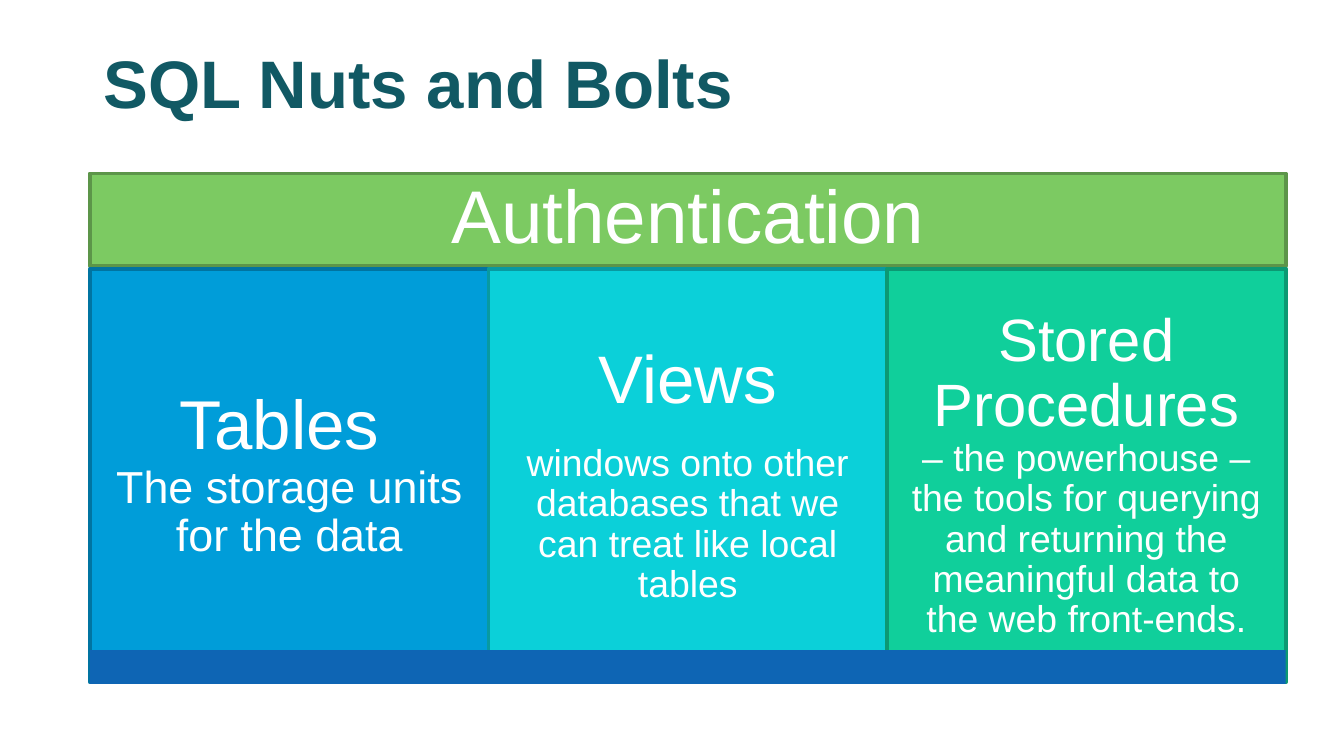
from pptx import Presentation
from pptx.dml.color import RGBColor
from pptx.enum import shapes, text
from pptx.util import Cm, Pt

FONT = "Arial"
WHITE = RGBColor(0xFF, 0xFF, 0xFF)
TEAL = RGBColor(0x11, 0x59, 0x64)
LIME = RGBColor(0x7C, 0xCA, 0x62)
MOSS = RGBColor(0x5C, 0x95, 0x49)
BLUE = RGBColor(0x00, 0x9D, 0xD9)
NAVY = RGBColor(0x00, 0x74, 0xA1)
CYAN = RGBColor(0x0B, 0xD0, 0xD9)
PINE = RGBColor(0x08, 0x9A, 0xA1)
MINT = RGBColor(0x10, 0xCF, 0x9B)
JADE = RGBColor(0x0C, 0x99, 0x73)
ROYAL = RGBColor(0x0E, 0x65, 0xB4)

LEFT, WIDTH = 1.7, 22.6
COL = WIDTH / 3

# Fill, edge, inset in cm, text and the sizes of its runs.
# In the text, \v breaks a line and \n starts a paragraph.
COLUMNS = [
    (BLUE, NAVY, 0.38, "Tables \vThe storage units for the data", (37, 24)),
    (CYAN, PINE, 0.38,
     "Views\nwindows onto other databases that we can treat like local tables",
     (36, 20)),
    (MINT, JADE, 0.33,
     "Stored Procedures\v– the powerhouse – the tools for querying and "
     "returning the meaningful data to the web front-ends.", (32, 20)),
]


def style(run, size, color, bold=False):
    font = run.font
    font.name, font.size, font.bold = FONT, Pt(size), bold
    font.color.rgb = color


def add_title(slide, words):
    title = slide.shapes.title
    title.left, title.top = Cm(LEFT), Cm(0.89)
    title.width, title.height = Cm(22.86), Cm(1.32)
    frame = title.text_frame
    frame.text = words
    frame.vertical_anchor = text.MSO_ANCHOR.MIDDLE
    frame.paragraphs[0].alignment = text.PP_ALIGN.LEFT
    style(frame.paragraphs[0].runs[0], 36, TEAL, True)


def add_box(slide, left, top, width, height, fill, edge=None):
    box = slide.shapes.add_shape(shapes.MSO_SHAPE.RECTANGLE, Cm(left), Cm(top),
                                 Cm(width), Cm(height))
    box.shadow.inherit = False
    box.fill.solid()
    box.fill.fore_color.rgb = fill
    if edge is None:
        box.line.fill.background()
    else:
        box.line.color.rgb = edge
        box.line.width = Pt(2)
    return box


def write(box, words, sizes, inset):
    """Centre white text in the box, with one size for each run in turn."""
    frame = box.text_frame
    frame.word_wrap = True
    frame.vertical_anchor = text.MSO_ANCHOR.MIDDLE
    frame.margin_left = frame.margin_right = Cm(inset)
    frame.margin_top = frame.margin_bottom = Cm(inset)
    frame.text = words
    for para in frame.paragraphs:
        para.alignment = text.PP_ALIGN.CENTER
        para.line_spacing = 0.9
        para.space_after = Pt(14)
    runs = [run for para in frame.paragraphs for run in para.runs]
    for run, size in zip(runs, sizes):
        style(run, size, WHITE)


def main():
    deck = Presentation()
    deck.slide_width, deck.slide_height = Cm(25.4), Cm(14.29)
    slide = deck.slides.add_slide(deck.slide_layouts[5])

    add_title(slide, "SQL Nuts and Bolts")
    head = add_box(slide, LEFT, 3.28, WIDTH, 1.75, LIME, MOSS)
    write(head, "Authentication", (40,), 0.43)
    for i, (fill, edge, inset, words, sizes) in enumerate(COLUMNS):
        box = add_box(slide, LEFT + i * COL, 5.08, COL, 7.82, fill, edge)
        write(box, words, sizes, inset)
    add_box(slide, LEFT, 12.29, WIDTH, 0.64, ROYAL)

    deck.save("out.pptx")


if __name__ == "__main__":
    main()
